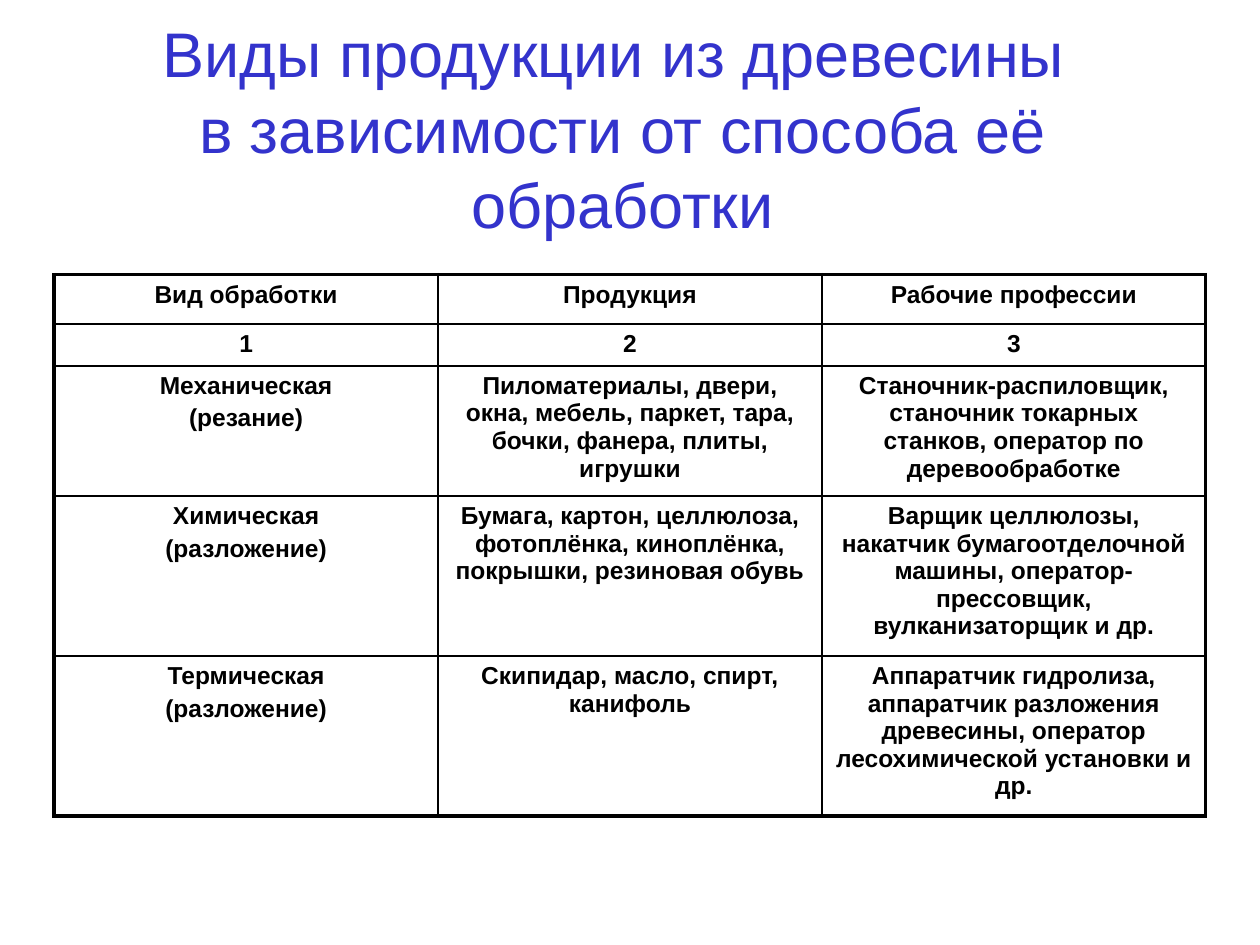
from dataclasses import dataclass

from lxml import etree
from pptx import Presentation, util as u
from pptx.dml import color
from pptx.enum import text
from pptx.oxml import ns


@dataclass(frozen=True)
class Theme:
    """Colours, type sizes and line widths of the slide."""
    font: str = "Arial"
    title_color: str = "3333CC"
    text_color: str = "000000"
    cell_fill: str = "FFFFFF"
    title_size: float = 36
    cell_size: float = 14
    paragraph_gap: float = 2.8
    inner_line: float = 1
    outer_line: float = 2.25


class SlideBuilder:
    """Draws elements on one slide, placed by shares of its size."""

    def __init__(self, presentation, theme):
        """Add a blank slide to the presentation."""
        self.presentation = presentation
        self.theme = theme
        self.slide = presentation.slides.add_slide(presentation.slide_layouts[6])

    def box(self, left, top, width, height):
        """Turn shares of the slide into lengths."""
        across, down = self.presentation.slide_width, self.presentation.slide_height
        return int(left * across), int(top * down), int(width * across), int(height * down)

    def add_lines(self, frame, lines, size, rgb, bold=False, gap=0):
        """Fill a text frame with one centred paragraph per line."""
        for index, line in enumerate(lines):
            paragraph = frame.add_paragraph() if index else frame.paragraphs[0]
            paragraph.alignment = text.PP_ALIGN.CENTER
            if index and gap:
                paragraph.space_before = u.Pt(gap)
            run = paragraph.add_run()
            run.text = line
            run.font.name = self.theme.font
            run.font.size = u.Pt(size)
            run.font.bold = bold
            run.font.color.rgb = color.RGBColor.from_string(rgb)

    def title(self, lines, *place):
        """Add the heading."""
        frame = self.slide.shapes.add_textbox(*self.box(*place)).text_frame
        frame.word_wrap = False
        frame.vertical_anchor = text.MSO_ANCHOR.MIDDLE
        self.add_lines(frame, lines, self.theme.title_size, self.theme.title_color)

    def border(self, cell, side, width):
        """Draw one edge of a cell."""
        properties = cell._tc.get_or_add_tcPr()
        line = etree.SubElement(properties, ns.qn(f"a:ln{side}"), w=str(u.Pt(width)))
        fill = etree.SubElement(line, ns.qn("a:solidFill"))
        etree.SubElement(fill, ns.qn("a:srgbClr"), val=self.theme.text_color)

    def table(self, rows, row_shares, *place):
        """Add a table with equal columns and a heavy outer frame."""
        theme = self.theme
        height, width = len(rows), len(rows[0])
        table = self.slide.shapes.add_table(height, width, *self.box(*place)).table
        for row, share in zip(table.rows, row_shares):
            row.height = int(share * self.presentation.slide_height)
        for r, row in enumerate(rows):
            for c, lines in enumerate(row):
                cell = table.cell(r, c)
                edges = {"L": c == 0, "R": c == width - 1, "T": r == 0, "B": r == height - 1}
                for side, outer in edges.items():
                    self.border(cell, side, theme.outer_line if outer else theme.inner_line)
                cell.fill.solid()
                cell.fill.fore_color.rgb = color.RGBColor.from_string(theme.cell_fill)
                self.add_lines(cell.text_frame, lines.split("\n"), theme.cell_size,
                               theme.text_color, True, theme.paragraph_gap)


TITLE = ["Виды продукции из древесины ", "в зависимости от способа её обработки"]
ROWS = [
    ("Вид обработки", "Продукция", "Рабочие профессии"),
    ("1", "2", "3"),
    ("Механическая\n(резание)",
     "Пиломатериалы, двери, окна, мебель, паркет, тара, бочки, фанера, плиты, игрушки",
     "Станочник-распиловщик, станочник токарных станков, оператор по деревообработке"),
    ("Химическая\n(разложение)",
     "Бумага, картон, целлюлоза, фотоплёнка, киноплёнка, покрышки, резиновая обувь",
     "Варщик целлюлозы, накатчик бумагоотделочной машины, оператор-прессовщик, "
     "вулканизаторщик и др."),
    ("Термическая\n(разложение)",
     "Скипидар, масло, спирт, канифоль",
     "Аппаратчик гидролиза, аппаратчик разложения древесины, оператор "
     "лесохимической установки и др."),
]
ROW_INCHES = [0.39, 0.33, 1.03, 1.27, 1.27]


def main():
    """Build and save the slide."""
    presentation = Presentation()
    presentation.slide_width, presentation.slide_height = u.Inches(10), u.Inches(7.5)
    builder = SlideBuilder(presentation, Theme())
    builder.title(TITLE, 0.027, 0.44 / 7.5, 0.934, 1.15 / 7.5)
    shares = [inches / 7.5 for inches in ROW_INCHES]
    builder.table(ROWS, shares, 0.043, 2.18 / 7.5, 0.914, sum(shares))
    presentation.save("out.pptx")


if __name__ == "__main__":
    main()
